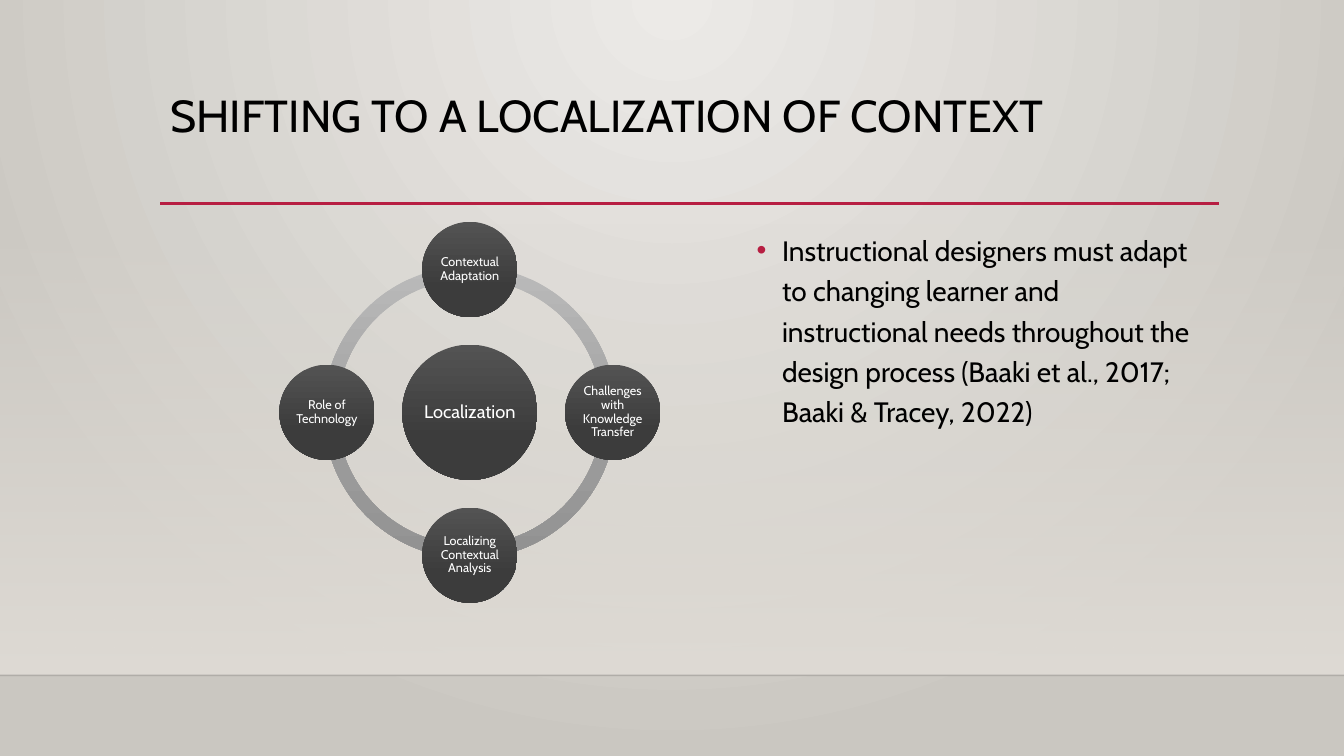
import math

import pptx
import pptx.dml.color
import pptx.enum.shapes
import pptx.enum.text
import pptx.oxml
import pptx.oxml.ns
import pptx.util
from lxml import etree

Cm, Pt, qn = pptx.util.Cm, pptx.util.Pt, pptx.oxml.ns.qn
SHAPE = pptx.enum.shapes.MSO_SHAPE
ALIGN = pptx.enum.text.PP_ALIGN
ANCHOR = pptx.enum.text.MSO_ANCHOR

TITLE = "SHIFTING TO A LOCALIZATION OF CONTEXT"
BODY = ("Instructional designers must adapt to changing learner and instructional needs "
        "throughout the design process (Baaki et al., 2017; Baaki & Tracey, 2022)")
HUB = "Localization"
NODES = ["Contextual Adaptation", "Challenges with Knowledge Transfer",
         "Localizing Contextual Analysis", "Role of Technology"]

FONT, ACCENT, BLACK, WHITE = "Cabin", "B71E42", "000000", "FFFFFF"
BACKDROP = [(0, "ECEAE7", 100), (100, "CAC7C1", 100)]
WALL = [(0, "DFDBD5", 0), (100, "DFDBD5", 100)]
RING = [(0, "BABABA", 100), (69, "9A9A9A", 100), (100, "929292", 100)]
DISC = [(0, "535353", 100), (69, "3C3C3C", 100), (100, "393939", 100)]

WIDTH, HEIGHT = 33.87, 19.05
WALL_TOP, FLOOR = 5.61, 17.02
LEFT, RIGHT, RULE_Y = 4.04, 30.73, 5.13
CX, CY, ORBIT = 11.84, 10.39, 3.6
RING_D, HUB_D, NODE_D = 7.37, 3.41, 2.4

DOWN = '<a:lin ang="5400000" scaled="0"/>'
FROM_TOP = '<a:path path="circle"><a:fillToRect l="43000" r="43000" b="100000"/></a:path>'


def rgb(value):
    return pptx.dml.color.RGBColor.from_string(value)


def gradient(fill, holder, stops, direction=DOWN):
    fill.solid()
    gs = "".join(
        f'<a:gs pos="{pos * 1000}"><a:srgbClr val="{color}">'
        f'<a:alpha val="{alpha * 1000}"/></a:srgbClr></a:gs>'
        for pos, color, alpha in stops)
    grad = pptx.oxml.parse_xml(
        f'<a:gradFill {pptx.oxml.ns.nsdecls("a")} rotWithShape="1">'
        f'<a:gsLst>{gs}</a:gsLst>{direction}</a:gradFill>')
    holder.replace(holder.find(qn("a:solidFill")), grad)


def add_shape(s, kind, x, y, w, h, stops):
    sp = s.shapes.add_shape(kind, Cm(x), Cm(y), Cm(w), Cm(h))
    sp.shadow.inherit = False
    sp.line.fill.background()
    gradient(sp.fill, sp._element.spPr, stops)
    return sp


def add_line(s, x1, x2, y, color, width, alpha=100):
    ln = s.shapes.add_connector(pptx.enum.shapes.MSO_CONNECTOR.STRAIGHT,
                                Cm(x1), Cm(y), Cm(x2), Cm(y))
    ln.line.color.rgb = rgb(color)
    ln.line.width = Pt(width)
    spPr = ln._element.spPr
    clr = spPr.find(".//" + qn("a:srgbClr"))
    etree.SubElement(clr, qn("a:alpha"), val=str(alpha * 1000))
    etree.SubElement(spPr, qn("a:effectLst"))


def write(tf, text, size, color, spacing, align=ALIGN.LEFT):
    tf.word_wrap = True
    tf.text = text
    p = tf.paragraphs[0]
    p.alignment = align
    p.line_spacing = spacing
    r = p.runs[0]
    r.font.name = FONT
    r.font.size = Pt(size)
    r.font.color.rgb = rgb(color)
    return p


def add_text(s, x, y, w, h, text, size, spacing):
    tb = s.shapes.add_textbox(Cm(x), Cm(y), Cm(w), Cm(h))
    return write(tb.text_frame, text, size, BLACK, spacing)


def add_bullet(p, color):
    pPr = p._p.get_or_add_pPr()
    pPr.set("marL", str(Cm(0.64)))
    pPr.set("indent", str(-Cm(0.64)))
    clr = etree.SubElement(pPr, qn("a:buClr"))
    etree.SubElement(clr, qn("a:srgbClr"), val=color)
    etree.SubElement(pPr, qn("a:buFont"), typeface="Arial")
    etree.SubElement(pPr, qn("a:buChar"), char="•")


def add_disc(s, cx, cy, d, text, size):
    sp = add_shape(s, SHAPE.OVAL, cx - d / 2, cy - d / 2, d, d, DISC)
    tf = sp.text_frame
    tf.margin_left = tf.margin_right = tf.margin_top = tf.margin_bottom = Cm(0.03)
    tf.vertical_anchor = ANCHOR.MIDDLE
    write(tf, text, size, WHITE, 0.9, ALIGN.CENTER)


def main():
    prs = pptx.Presentation()
    prs.slide_width, prs.slide_height = Cm(WIDTH), Cm(HEIGHT)
    s = prs.slides.add_slide(prs.slide_layouts[6])

    fill = s.background.fill
    fill.solid()
    gradient(fill, s._element.find(".//" + qn("p:bgPr")), BACKDROP, FROM_TOP)
    add_shape(s, SHAPE.RECTANGLE, 0, WALL_TOP, WIDTH, FLOOR - WALL_TOP, WALL)
    add_line(s, 0, WIDTH, FLOOR, BLACK, 1, 20)
    add_line(s, LEFT, RIGHT, RULE_Y, ACCENT, 2.5)

    add_text(s, LEFT, 2.24, 26.67, 2.92, TITLE, 32, 0.9)
    add_bullet(add_text(s, 18.82, 5.59, 11.89, 8.76, BODY, 20, 1.2), ACCENT)

    for start in (180, 90, 0, 270):
        arc = add_shape(s, SHAPE.BLOCK_ARC, CX - RING_D / 2, CY - RING_D / 2,
                        RING_D, RING_D, RING)
        arc.adjustments[0] = start * 0.6
        arc.adjustments[1] = (start + 90) % 360 * 0.6
        arc.adjustments[2] = 0.046

    add_disc(s, CX, CY, HUB_D, HUB, 13)
    for i, text in enumerate(NODES):
        angle = math.tau * i / len(NODES)
        add_disc(s, CX + ORBIT * math.sin(angle), CY - ORBIT * math.cos(angle),
                 NODE_D, text, 9)

    prs.save("out.pptx")


if __name__ == "__main__":
    main()
